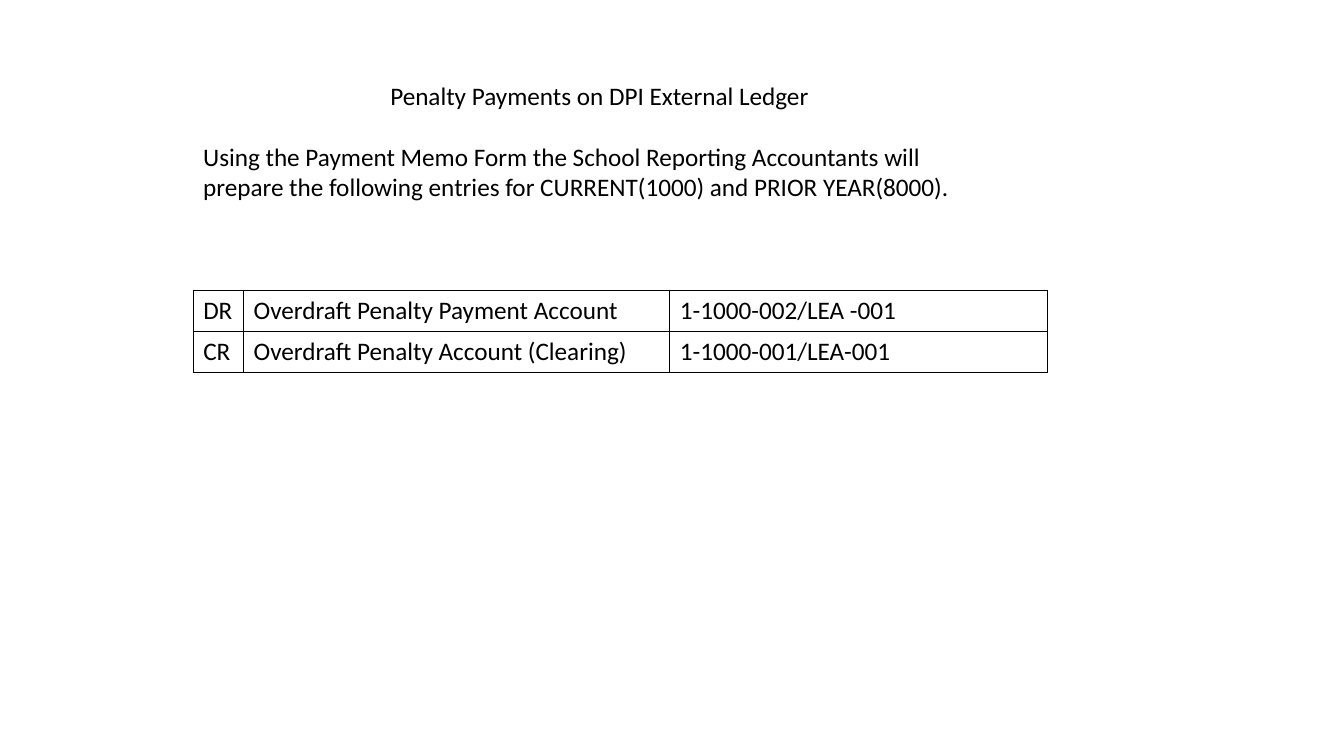
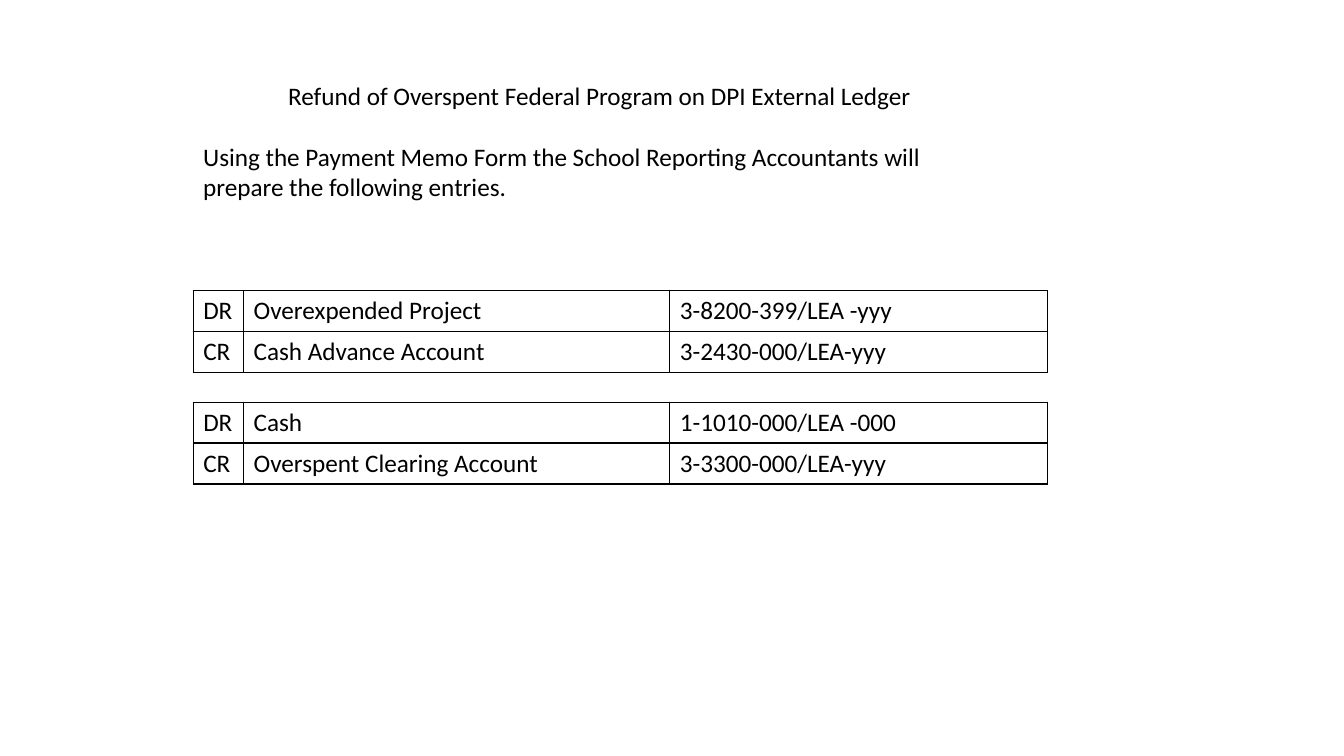
from lxml import etree
from pptx import Presentation
from pptx.dml.color import RGBColor
from pptx.enum.text import MSO_AUTO_SIZE, PP_ALIGN
from pptx.oxml.ns import qn
from pptx.util import Emu, Pt

PX = 9525  # EMU in one px, 96 px to the inch
BLACK = RGBColor(0, 0, 0)
FONT = "Calibri"
TEXT_SIZE = 18
LINE_HEIGHT = 22
LEFT, CENTER = PP_ALIGN.LEFT, PP_ALIGN.CENTER
FIT_SHAPE = MSO_AUTO_SIZE.SHAPE_TO_FIT_TEXT

MARGIN = 184
TABLE_TOP, TABLE_PITCH = 277, 106
COLUMN_WIDTHS = (48, 406, 360)
ROW_HEIGHT = 39

INTRO = "Using the Payment Memo Form the School Reporting Accountants will prepare the following entries"
SLIDES = [
    (
        "Penalty Payments on DPI External Ledger",
        INTRO + " for CURRENT(1000) and PRIOR YEAR(8000).",
        [
            [("DR", "Overdraft Penalty Payment Account", "1-1000-002/LEA -001"),
             ("CR", "Overdraft Penalty Account (Clearing)", "1-1000-001/LEA-001")],
        ],
    ),
    (
        "Refund of Overspent Federal Program on DPI External Ledger",
        INTRO + ".",
        [
            [("DR", "Overexpended Project", "3-8200-399/LEA -yyy"),
             ("CR", "Cash Advance Account", "3-2430-000/LEA-yyy")],
            [("DR", "Cash", "1-1010-000/LEA -000"),
             ("CR", "Overspent Clearing Account", "3-3300-000/LEA-yyy")],
        ],
    ),
]


def px(*lengths):
    return [Emu(length * PX) for length in lengths]


def write(para, text, align=LEFT, space_after=0):
    para.alignment = align
    para.space_after = Pt(space_after)
    span = para.add_run()
    span.text = text
    span.font.name = FONT
    span.font.size = Pt(TEXT_SIZE)
    span.font.color.rgb = BLACK


deck = Presentation()
deck.slide_width, deck.slide_height = px(1280, 720)

for title, intro, entries in SLIDES:
    page = deck.slides.add_slide(deck.slide_layouts[6])
    box = page.shapes.add_textbox(*px(MARGIN, 72, 774, 126))
    frame = box.text_frame
    frame.word_wrap = True
    frame.auto_size = FIT_SHAPE
    write(frame.paragraphs[0], title, align=CENTER, space_after=LINE_HEIGHT)
    write(frame.add_paragraph(), intro)

    for index, rows in enumerate(entries):
        top = TABLE_TOP + index * TABLE_PITCH
        place = px(MARGIN, top, sum(COLUMN_WIDTHS), ROW_HEIGHT * len(rows))
        table = page.shapes.add_table(len(rows), len(COLUMN_WIDTHS), *place).table
        table.first_row = table.horz_banding = False
        for column, width in zip(table.columns, px(*COLUMN_WIDTHS)):
            column.width = width
        for row, texts in zip(table.rows, rows):
            row.height = Emu(ROW_HEIGHT * PX)
            for cell, text in zip(row.cells, texts):
                write(cell.text_frame.paragraphs[0], text)
                cell.fill.background()
                properties = cell.fill._xPr
                for position, side in enumerate(("a:lnL", "a:lnR", "a:lnT", "a:lnB")):
                    border = etree.Element(qn(side), w=str(Pt(1)))
                    fill = etree.SubElement(border, qn("a:solidFill"))
                    etree.SubElement(fill, qn("a:srgbClr"), val=str(BLACK))
                    properties.insert(position, border)

deck.save("out.pptx")
